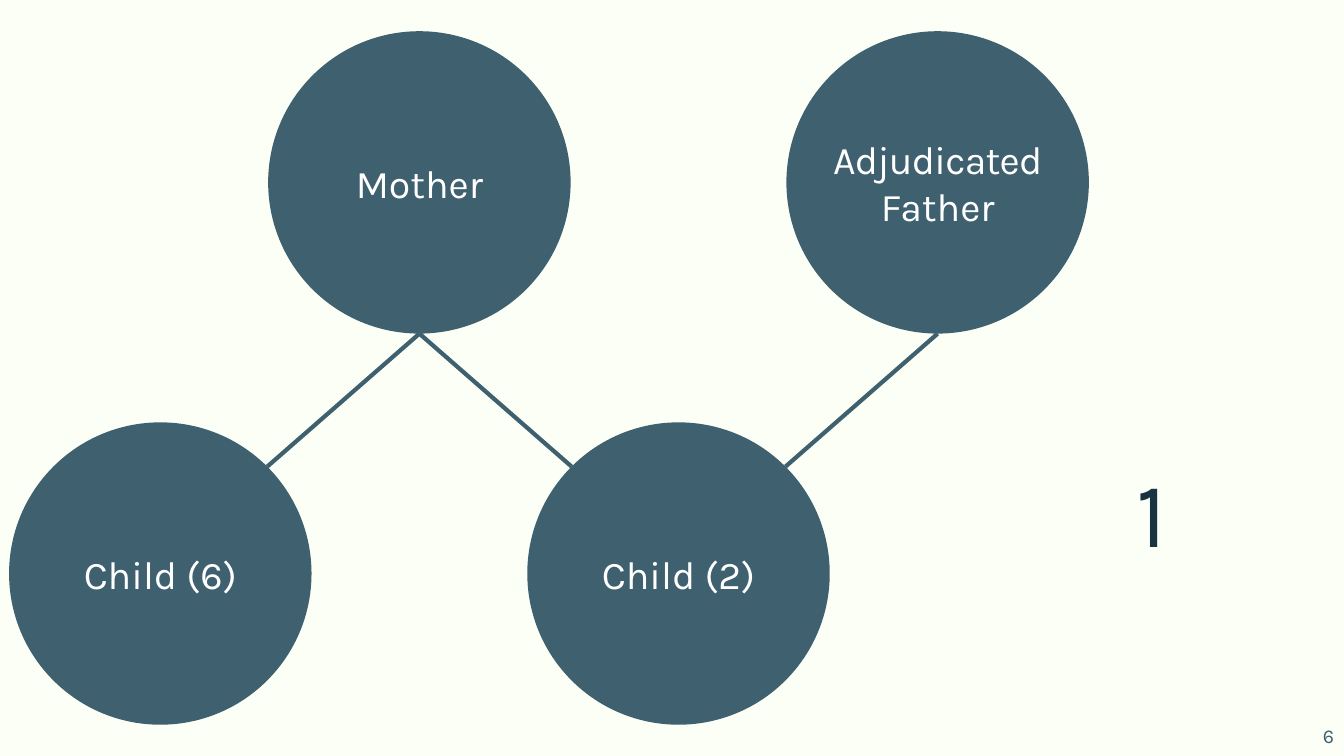
import math

from lxml import etree
from pptx import Presentation
from pptx import util as u
from pptx.dml.color import RGBColor
from pptx.enum import shapes, text
from pptx.oxml.ns import qn

COLORS = {"paper": "FCFFF5", "slate": "3E606F", "ink": "193441", "white": "FFFFFF"}
DIAMETER = 3
RADIUS = DIAMETER / 2
PARENT_TOP, CHILD_TOP = 0.31, 4.19
FIRST_LEFT, STEP = 0.09, 2.57


def color(name):
    return RGBColor.from_string(COLORS[name])


class FamilyChart:
    def __init__(self, deck, font="Karla"):
        self.font = font
        self.page = deck.slides.add_slide(deck.slide_layouts[6])
        background = self.page.background.fill
        background.solid()
        background.fore_color.rgb = color("paper")

    def set_words(self, shape, spans, size, ink, align, **frame_format):
        frame = shape.text_frame
        for name, value in frame_format.items():
            setattr(frame, name, value)
        para = frame.paragraphs[0]
        para.alignment = align
        for words, spacing in spans:
            span = para.add_run()
            span.text = words
            font_format = {"name": self.font, "size": u.Pt(size)}
            for name, value in font_format.items():
                setattr(span.font, name, value)
            span.font.color.rgb = color(ink)
            if spacing:
                span._r.get_or_add_rPr().set("spc", str(int(spacing * 100)))

    def person(self, left, top, spans, **frame_format):
        circle = self.page.shapes.add_shape(
            shapes.MSO_SHAPE.OVAL, u.Inches(left), u.Inches(top),
            u.Inches(DIAMETER), u.Inches(DIAMETER))
        circle.shadow.inherit = False
        circle.fill.solid()
        circle.fill.fore_color.rgb = color("slate")
        circle.line.fill.background()
        self.set_words(circle, spans, 28, "white", text.PP_ALIGN.CENTER,
                       vertical_anchor=text.MSO_ANCHOR.MIDDLE, word_wrap=True,
                       **frame_format)

    def descent(self, parent_left, child_left):
        start = parent_left + RADIUS
        child_center = child_left + RADIUS
        reach = RADIUS * math.sqrt(0.5)
        end = child_center + math.copysign(reach, start - child_center)
        line = self.page.shapes.add_connector(
            shapes.MSO_CONNECTOR.STRAIGHT,
            u.Inches(start), u.Inches(PARENT_TOP + DIAMETER),
            u.Inches(end), u.Inches(CHILD_TOP + RADIUS - reach))
        line.line.width = u.Pt(3)
        line.line.color.rgb = color("slate")
        etree.SubElement(line._element.spPr, qn("a:effectLst"))

    def label(self, left, top, width, height, words, size, ink, align, **frame_format):
        box = self.page.shapes.add_textbox(*map(u.Inches, (left, top, width, height)))
        self.set_words(box, [(words, 0)], size, ink, align, **frame_format)


def main():
    deck = Presentation()
    deck.slide_width, deck.slide_height = u.Inches(13.33), u.Inches(7.5)
    chart = FamilyChart(deck)
    older, mother, younger, father = [FIRST_LEFT + STEP * i for i in range(4)]

    chart.label(12.61, 7.1, 0.72, 0.4, "6", 14, "slate", text.PP_ALIGN.RIGHT,
                vertical_anchor=text.MSO_ANCHOR.MIDDLE, word_wrap=True)
    chart.person(mother, PARENT_TOP, [("Mother", 0)])
    chart.person(father, PARENT_TOP, [("Adjudicated", -0.5), (" Father", 0)],
                 margin_left=0, margin_right=0)
    chart.person(younger, CHILD_TOP, [("Child (2)", 0)])
    chart.person(older, CHILD_TOP, [("Child (6)", 0)])
    for parent, child in ((mother, younger), (father, younger), (mother, older)):
        chart.descent(parent, child)
    chart.label(11.07, 4.47, 0.7, 1.21, "1", 66, "ink", text.PP_ALIGN.CENTER,
                word_wrap=False, auto_size=text.MSO_AUTO_SIZE.SHAPE_TO_FIT_TEXT)

    deck.save("out.pptx")


if __name__ == "__main__":
    main()
